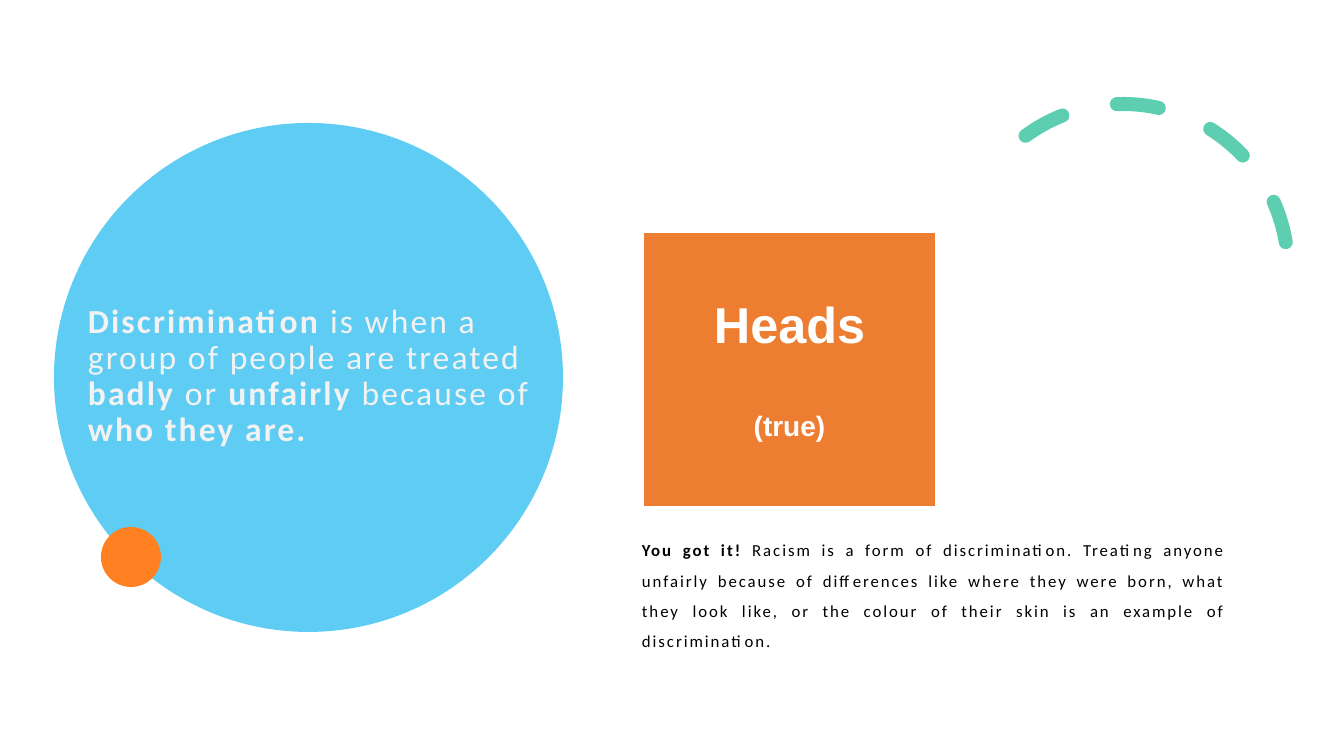
from lxml import etree
from pptx import Presentation
from pptx import util as u
from pptx.dml.color import RGBColor
from pptx.enum import dml, shapes, text
from pptx.oxml.ns import qn

PX = u.Inches(1) / 100.8
MSO = shapes.MSO_SHAPE
MIDDLE = text.MSO_ANCHOR.MIDDLE
CENTER, JUSTIFY = text.PP_ALIGN.CENTER, text.PP_ALIGN.JUSTIFY


def px(n):
    return u.Emu(round(n * PX))


def color(hex_code):
    return RGBColor.from_string(hex_code)


def add_run(p, words, size, hex_code, font, bold, spacing=0):
    """Spacing is the letter spacing in hundredths of a point."""
    r = p.add_run()
    r.text = words
    r.font.size, r.font.name, r.font.bold = u.Pt(size), font, bold
    r.font.color.rgb = color(hex_code)
    if spacing:
        r._r.get_or_add_rPr().set("spc", str(spacing))


def add_text_frame(s, x, y, w, h):
    tf = s.shapes.add_textbox(px(x), px(y), px(w), px(h)).text_frame
    tf.word_wrap = True
    tf.margin_left = tf.margin_top = tf.margin_right = px(12)
    tf.margin_bottom = px(10)
    return tf


def add_disc(s, x, y, size, hex_code):
    sp = s.shapes.add_shape(MSO.OVAL, px(x), px(y), px(size), px(size))
    sp.shadow.inherit = False
    sp.fill.solid()
    sp.fill.fore_color.rgb = color(hex_code)
    sp.line.fill.background()


def add_definition(s, x, y, size):
    add_disc(s, x, y, size, "5ECCF3")
    tf = add_text_frame(s, x + 22, y + 31, 491, 443)
    tf.vertical_anchor = MIDDLE
    p = tf.paragraphs[0]
    p.line_spacing = 0.9
    for words, bold in [
        ("Discrimination", True),
        (" is when a group of people are treated ", False),
        ("badly ", True),
        ("or ", False),
        ("unfairly", True),
        (" because of ", False),
        ("who they are.", True),
    ]:
        add_run(p, words, 24, "F2F2F2", "Calibri", bold, 150)
    add_disc(s, x + 47, y + 404, 60, "FF8021")


def add_dashed_arc(s, x, y, size):
    sp = s.shapes.add_shape(MSO.ARC, px(x), px(y), px(size), px(size))
    sp.shadow.inherit = False
    sp.adjustments[0], sp.adjustments[1] = 158.17, 17.81
    sp.rotation = 330.2
    sp.fill.background()
    sp.line.color.rgb = color("5DCEAF")
    sp.line.width = u.Pt(10)
    sp.line.dash_style = dml.MSO_LINE.DASH
    sp.line._get_or_add_ln().set("cap", "rnd")


def add_border(cell, side, points):
    ln = etree.SubElement(cell._tc.get_or_add_tcPr(), qn("a:ln" + side), w=str(u.Pt(points)))
    fill = etree.SubElement(ln, qn("a:solidFill"))
    etree.SubElement(fill, qn("a:srgbClr"), val="FFFFFF")


def add_answer_card(s, x, y, w, h):
    table = s.shapes.add_table(1, 1, px(x), px(y), px(w), px(h)).table
    cell = table.cell(0, 0)
    for side, points in [("L", 1), ("R", 1), ("T", 1), ("B", 3)]:
        add_border(cell, side, points)
    cell.fill.solid()
    cell.fill.fore_color.rgb = color("ED7D31")
    cell.vertical_anchor = MIDDLE
    tf = cell.text_frame
    answer, meaning = tf.paragraphs[0], tf.add_paragraph()
    answer.alignment = meaning.alignment = CENTER
    meaning.space_before = u.Pt(41)
    add_run(answer, "Heads", 36, "FFFFFF", "Arial", True)
    add_run(meaning, "(true)", 20, "FFFFFF", "Arial", True)


def add_explanation(s, x, y, w, h):
    p = add_text_frame(s, x, y, w, h).paragraphs[0]
    p.alignment = JUSTIFY
    p.line_spacing = 1.5
    p.space_before = u.Pt(10)
    pPr = p._p.get_or_add_pPr()
    pPr.set("marL", str(px(25)))
    pPr.set("indent", "0")
    for words, bold in [
        ("You got it!", True),
        (" Racism is a form of discrimination. Treating anyone unfairly because of "
         "differences like where they were born, what they look like, or the colour "
         "of their skin is an example of discrimination.", False),
    ]:
        add_run(p, words, 12, "000000", "Calibri", bold, 140)


def main():
    prs = Presentation()
    prs.slide_width, prs.slide_height = px(1344), px(756)
    s = prs.slides.add_slide(prs.slide_layouts[6])
    add_definition(s, 54, 123, 509)
    add_dashed_arc(s, 958, 104, 330)
    add_answer_card(s, 643, 232, 293, 276)
    add_explanation(s, 605, 518, 633, 176)
    prs.save("out.pptx")


if __name__ == "__main__":
    main()
